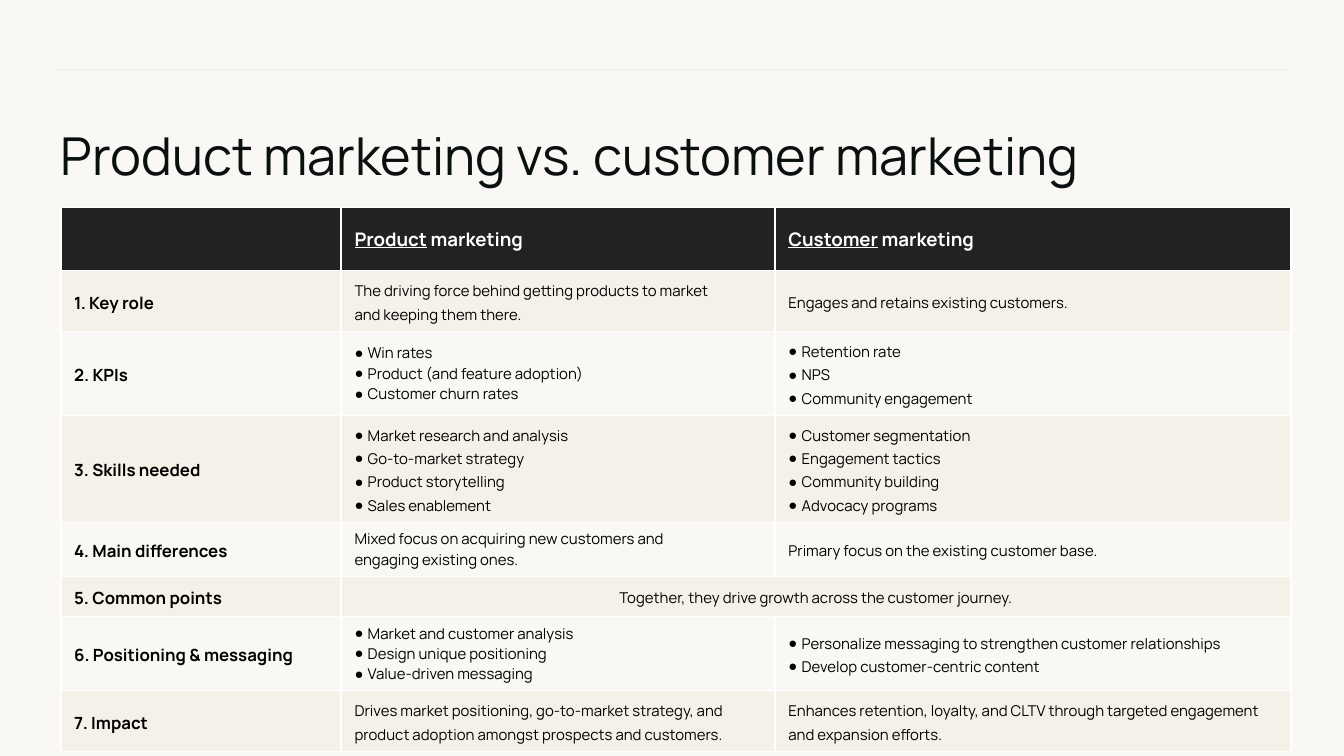
from dataclasses import dataclass

from pptx import Presentation
from pptx.dml.color import RGBColor as Rgb
from pptx.enum.shapes import MSO_CONNECTOR as Link
from pptx.enum.text import MSO_ANCHOR as Anchor, PP_ALIGN as Align
from pptx.oxml.ns import qn
from pptx.util import Cm, Pt
from lxml.etree import SubElement as Sub


@dataclass(frozen=True)
class Theme:
    face: str = "Manrope"
    dots: str = "Arial"
    paper: str = "F9F8F5"
    sand: str = "F5F1E8"
    dark: str = "222222"
    ink: str = "000000"
    title: str = "09100F"
    white: str = "FFFFFF"
    rule: str = "EFEFEF"
    big: float = 28
    head: float = 10
    label: float = 9
    body: float = 8


LOOSE, TIGHT = 1.15, None
COLS = (5.3, 8.2, 9.75)
HEAD = ("Product marketing", "Customer marketing")

# Label, height, then two cells: lines, bulleted, line spacing
ROWS = [
    ("1. Key role", 1.15,
     (["The driving force behind getting products to market",
       "and keeping them there."], False, LOOSE),
     (["Engages and retains existing customers."], False, LOOSE)),
    ("2. KPIs", 1.58,
     (["Win rates", "Product (and feature adoption)",
       "Customer churn rates"], True, TIGHT),
     (["Retention rate", "NPS", "Community engagement"], True, LOOSE)),
    ("3. Skills needed", 2.02,
     (["Market research and analysis", "Go-to-market strategy",
       "Product storytelling", "Sales enablement"], True, LOOSE),
     (["Customer segmentation", "Engagement tactics",
       "Community building", "Advocacy programs"], True, LOOSE)),
    ("4. Main differences", 1.03,
     (["Mixed focus on acquiring new customers and",
       "engaging existing ones."], False, TIGHT),
     (["Primary focus on the existing customer base."], False, LOOSE)),
    ("5. Common points", 0.75,
     (["Together, they drive growth across the customer journey."],
      False, LOOSE), None),
    ("6. Positioning & messaging", 1.41,
     (["Market and customer analysis", "Design unique positioning",
       "Value-driven messaging"], True, TIGHT),
     (["Personalize messaging to strengthen customer relationships",
       "Develop customer-centric content"], True, LOOSE)),
    ("7. Impact", 1.15,
     (["Drives market positioning, go-to-market strategy, and",
       "product adoption amongst prospects and customers."], False, LOOSE),
     (["Enhances retention, loyalty, and CLTV through targeted "
       "engagement and expansion efforts."], False, LOOSE)),
]


def apply(item, form):
    for name, value in form.items():
        setattr(item, name, value)


class Page:
    def __init__(self, slide, theme):
        self.slide, self.theme = slide, theme
        fill = slide.background.fill
        fill.solid()
        fill.fore_color.rgb = Rgb.from_string(theme.paper)

    def run(self, para, text, size, color, **form):
        run = para.add_run()
        run.text = text
        apply(run.font, dict(name=self.theme.face, size=Pt(size), **form))
        run.font.color.rgb = Rgb.from_string(color)

    def rule(self, left, right, top):
        line = self.slide.shapes.add_connector(
            Link.STRAIGHT, Cm(right), Cm(top), Cm(left), Cm(top))
        line.line.width = Pt(0.75)
        line.line.color.rgb = Rgb.from_string(self.theme.rule)
        Sub(line._element.spPr, qn("a:effectLst"))

    def title(self, text, left, top, width, height):
        box = self.slide.shapes.add_textbox(
            Cm(left), Cm(top), Cm(width), Cm(height))
        frame = box.text_frame
        apply(frame, dict(word_wrap=True, vertical_anchor=Anchor.MIDDLE,
                          margin_left=0, margin_right=0,
                          margin_top=0, margin_bottom=0))
        self.run(frame.paragraphs[0], text, self.theme.big, self.theme.title)

    def table(self, left, top, widths, heights):
        frame = self.slide.shapes.add_table(
            len(heights), len(widths), Cm(left), Cm(top),
            Cm(sum(widths)), Cm(sum(heights)))
        table = frame.table
        apply(table, dict(first_row=False, horz_banding=False))
        for col, width in zip(table.columns, widths):
            col.width = Cm(width)
        for row, height in zip(table.rows, heights):
            row.height = Cm(height)
        return table

    def cell(self, cell, fill, pad=0.13):
        """Set borders, fill and margins."""
        props = cell._tc.get_or_add_tcPr()
        for side, width in (("L", 1), ("R", 1), ("T", 0.75), ("B", 0.75)):
            line = Sub(props, qn(f"a:ln{side}"), w=str(Pt(width)))
            paint = Sub(line, qn("a:solidFill"))
            Sub(paint, qn("a:srgbClr"), val=self.theme.white)
        cell.fill.solid()
        cell.fill.fore_color.rgb = Rgb.from_string(fill)
        apply(cell, dict(vertical_anchor=Anchor.MIDDLE,
                         margin_left=Cm(0.25), margin_right=Cm(0.25),
                         margin_top=Cm(pad), margin_bottom=Cm(pad)))

    def bullet(self, para):
        props = para._p.get_or_add_pPr()
        props.set("marL", str(Cm(0.25)))
        props.set("indent", str(Cm(-0.28)))
        tint = Sub(props, qn("a:buClr"))
        Sub(tint, qn("a:srgbClr"), val=self.theme.ink)
        Sub(props, qn("a:buFont"), typeface=self.theme.dots)
        Sub(props, qn("a:buChar"), char="●")

    def lines(self, cell, lines, dots, space, size, bold=False, align=None):
        frame = cell.text_frame
        for i, text in enumerate(lines):
            para = frame.add_paragraph() if i else frame.paragraphs[0]
            apply(para, dict(line_spacing=space, alignment=align))
            if dots:
                self.bullet(para)
            self.run(para, text, size, self.theme.ink, bold=bold)

    def header(self, table, names):
        look = self.theme
        self.cell(table.cell(0, 0), look.dark)
        for col, name in enumerate(names, 1):
            cell = table.cell(0, col)
            self.cell(cell, look.dark, pad=0.25)
            first, rest = name.split(" ", 1)
            para = cell.text_frame.paragraphs[0]
            self.run(para, first, look.head, look.white,
                     bold=True, underline=True)
            self.run(para, " " + rest, look.head, look.white,
                     bold=True, underline=False)

    def row(self, table, index, label, left, right):
        """Fill one row; the left text spans both columns if right is None."""
        look = self.theme
        cells = [table.cell(index, col) for col in range(3)]
        for cell in cells:
            self.cell(cell, look.sand if index % 2 else look.paper)
        self.lines(cells[0], [label], False, LOOSE, look.label, bold=True)
        if right is None:
            cells[1].merge(cells[2])
            self.lines(cells[1], *left, look.body, align=Align.CENTER)
        else:
            for cell, part in zip(cells[1:], (left, right)):
                self.lines(cell, *part, look.body)


def main():
    deck = Presentation()
    apply(deck, dict(slide_width=Cm(25.4), slide_height=Cm(14.29)))
    page = Page(deck.slides.add_slide(deck.slide_layouts[6]), Theme())
    page.rule(0.99, 24.41, 1.31)
    page.title("Product marketing vs. customer marketing",
               1.15, 2.25, 23.44, 1.35)
    table = page.table(1.15, 3.92, COLS, [1.2] + [row[1] for row in ROWS])
    page.header(table, HEAD)
    for index, (label, _, left, right) in enumerate(ROWS, 1):
        page.row(table, index, label, left, right)
    deck.save("out.pptx")


if __name__ == "__main__":
    main()
